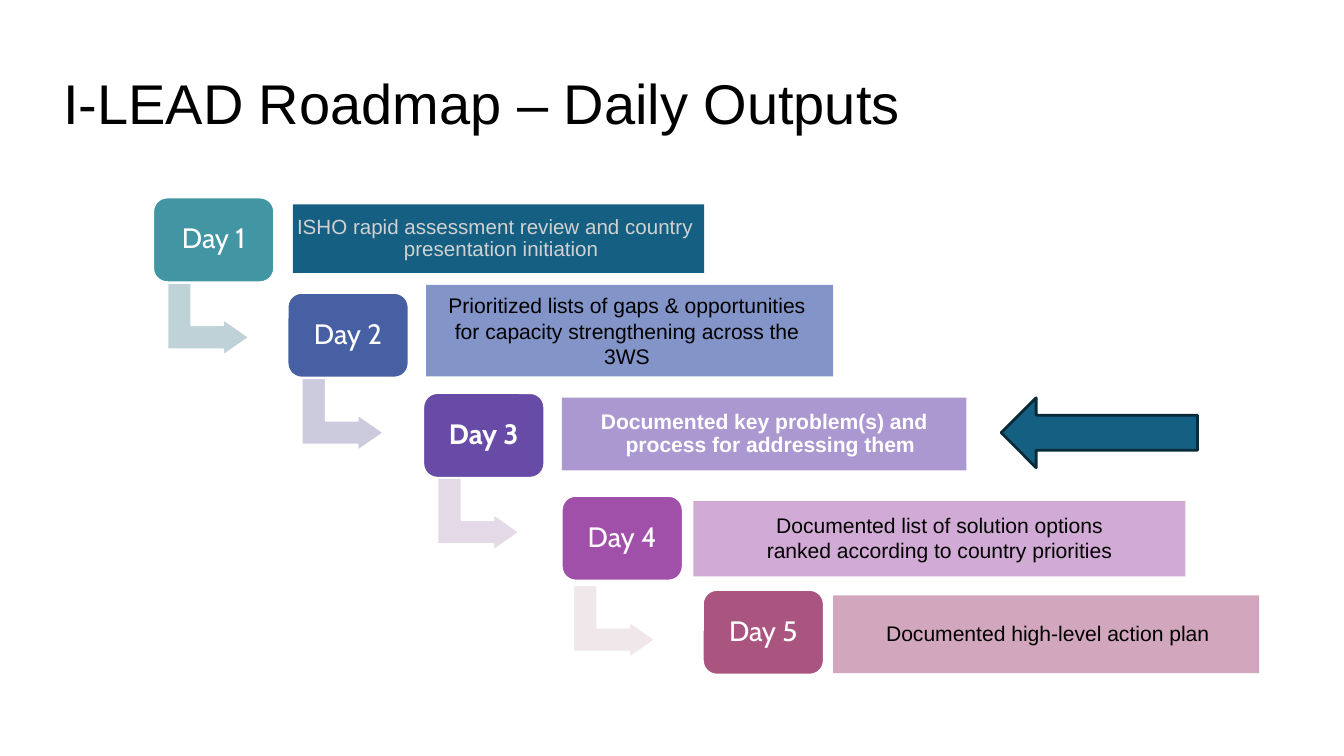
from pptx import Presentation
from pptx.dml.color import RGBColor
from pptx.enum.shapes import MSO_SHAPE
from pptx.enum.text import MSO_ANCHOR, MSO_AUTO_SIZE, PP_ALIGN
from pptx.util import Inches, Pt

# Widescreen page; grid of 100 columns with square cells
WIDTH = Inches(10)
HEIGHT = WIDTH * 9 // 16
CELL = WIDTH / 100

WHITE = RGBColor(0xFF, 0xFF, 0xFF)
BLACK = RGBColor(0x00, 0x00, 0x00)
GREY = RGBColor(0xD1, 0xD1, 0xD1)
PETROL = RGBColor(0x15, 0x60, 0x82)
DARK_PETROL = RGBColor(0x09, 0x2A, 0x39)

DAY_FILLS = [RGBColor(0x42, 0x95, 0xA2), RGBColor(0x47, 0x60, 0xA3),
             RGBColor(0x68, 0x4B, 0xA6), RGBColor(0xA0, 0x50, 0xA8),
             RGBColor(0xAA, 0x55, 0x7F)]
BAR_FILLS = [PETROL, RGBColor(0x82, 0x94, 0xC8), RGBColor(0xAB, 0x98, 0xD0),
             RGBColor(0xD2, 0xAA, 0xD6), RGBColor(0xD2, 0xA6, 0xBC)]
ARROW_FILLS = [RGBColor(0xBE, 0xD2, 0xD7), RGBColor(0xCC, 0xCB, 0xDE),
               RGBColor(0xE4, 0xD9, 0xE7), RGBColor(0xF0, 0xE7, 0xEA)]

# Cells as left, top, width, height
DAY_SIZE = (9, 6.3)
DAY_CORNERS = [(11.4, 14.7), (21.4, 21.8), (31.5, 29.25), (41.8, 36.9), (52.3, 43.9)]
ARROW_SIZE = (5.4, 6.1)
ARROW_CORNERS = [(12.8, 20.7), (22.8, 27.8), (32.9, 35.2), (43, 43.2)]
BAR_AREAS = [(21.8, 15.2, 30.6, 5.1), (31.7, 21.2, 30.3, 6.8),
             (41.8, 29.6, 30.1, 5.4), (51.6, 37.3, 36.6, 5.6),
             (62, 44.3, 31.7, 5.8)]

# Lines, font, hanging indent, line spacing, left and right inset of each bar
OUTPUTS = [
    (["ISHO rapid assessment review and country presentation initiation"],
     {"size": Pt(11), "color": GREY}, 0.09, 0.9, (0, 0.05)),
    (["Prioritized lists of gaps & opportunities for capacity strengthening across the 3WS"],
     {"color": BLACK}, 0, 1.0, (0.08, 0.12)),
    (["Documented key problem(s) and process for addressing them"],
     {"color": WHITE, "bold": True}, 0.09, 0.9, (0.05, 0.05)),
    (["Documented list of solution options", "ranked according to country priorities"],
     {"color": BLACK}, 0.07, 0.9, (0.05, 0.05)),
    (["Documented\u00a0high-level action plan"],
     {"color": BLACK}, 0.09, 0.9, (0.06, 0.04)),
]
CURRENT_DAY = 3


def set_values(target, values):
    for name, value in values.items():
        setattr(target, name, value)


def format_font(font, values):
    values = dict(values)
    font.color.rgb = values.pop("color")
    set_values(font, values)


def grid_area(area):
    return [round(cells * CELL) for cells in area]


def add_block(page, kind, area, fill, line=None, line_width=1):
    block = page.shapes.add_shape(kind, *grid_area(area))
    block.shadow.inherit = False
    block.fill.solid()
    block.fill.fore_color.rgb = fill
    if line is None:
        block.line.fill.background()
    else:
        block.line.color.rgb = line
        block.line.width = Pt(line_width)
    return block


def write_lines(block, lines, font, hanging=0, spacing=0.9, insets=(0.06, 0.06)):
    frame = block.text_frame
    set_values(frame, {
        "word_wrap": True, "vertical_anchor": MSO_ANCHOR.MIDDLE,
        "margin_left": Inches(insets[0]), "margin_right": Inches(insets[1]),
        "margin_top": Inches(0.05), "margin_bottom": Inches(0.05)})
    for number, line in enumerate(lines):
        para = frame.add_paragraph() if number else frame.paragraphs[0]
        set_values(para, {"alignment": PP_ALIGN.CENTER, "line_spacing": spacing})
        if number:
            para.space_before = Pt(1.3)
        if hanging:
            properties = para._p.get_or_add_pPr()
            properties.set("marL", str(Inches(hanging)))
            properties.set("indent", str(-Inches(hanging)))
        span = para.add_run()
        span.text = line
        format_font(span.font, font)


def add_title(page, text):
    title = page.shapes.title
    left, top, width, height = grid_area((4.7, 1.7, 78, 12.8))
    set_values(title, {"left": left, "top": top, "width": width, "height": height})
    frame = title.text_frame
    set_values(frame, {
        "text": text, "word_wrap": True, "auto_size": MSO_AUTO_SIZE.NONE,
        "vertical_anchor": MSO_ANCHOR.MIDDLE, "margin_left": 0,
        "margin_right": 0, "margin_top": 0, "margin_bottom": 0})
    para = frame.paragraphs[0]
    set_values(para, {"alignment": PP_ALIGN.LEFT, "line_spacing": 0.8})
    format_font(para.runs[0].font, {"name": "Arial", "size": Pt(30), "color": BLACK})


def add_step_arrow(page, corner, fill):
    arrow = add_block(page, MSO_SHAPE.BENT_UP_ARROW, corner + ARROW_SIZE, fill, WHITE)
    arrow.rotation = 90
    for index, share in enumerate((0.33, 0.25, 0.36)):
        arrow.adjustments[index] = share


def add_day(page, number, corner, fill):
    day = add_block(page, MSO_SHAPE.ROUNDED_RECTANGLE, corner + DAY_SIZE, fill, WHITE)
    write_lines(day, [f"Day {number}"], {
        "name": "Cabin", "size": Pt(15), "color": WHITE, "bold": number == CURRENT_DAY})


def add_output(page, area, fill, output):
    lines, font, hanging, spacing, insets = output
    bar = add_block(page, MSO_SHAPE.RECTANGLE, area, fill)
    write_lines(bar, lines, {"name": "Arial", "size": Pt(11.3)} | font,
                hanging, spacing, insets)


def main():
    deck = Presentation()
    set_values(deck, {"slide_width": WIDTH, "slide_height": HEIGHT})
    page = deck.slides.add_slide(deck.slide_layouts[5])
    add_title(page, "I-LEAD Roadmap – Daily Outputs")

    # Staircase of days, each with its output
    for corner, fill in zip(ARROW_CORNERS, ARROW_FILLS):
        add_step_arrow(page, corner, fill)
    steps = zip(DAY_CORNERS, DAY_FILLS, BAR_AREAS, BAR_FILLS, OUTPUTS)
    for number, (corner, day_fill, area, bar_fill, output) in enumerate(steps, 1):
        add_day(page, number, corner, day_fill)
        add_output(page, area, bar_fill, output)

    # Pointer to the current day
    add_block(page, MSO_SHAPE.LEFT_ARROW, (74.5, 29.6, 14.6, 5.2),
              PETROL, DARK_PETROL, 1.5)
    deck.save("out.pptx")


if __name__ == "__main__":
    main()
